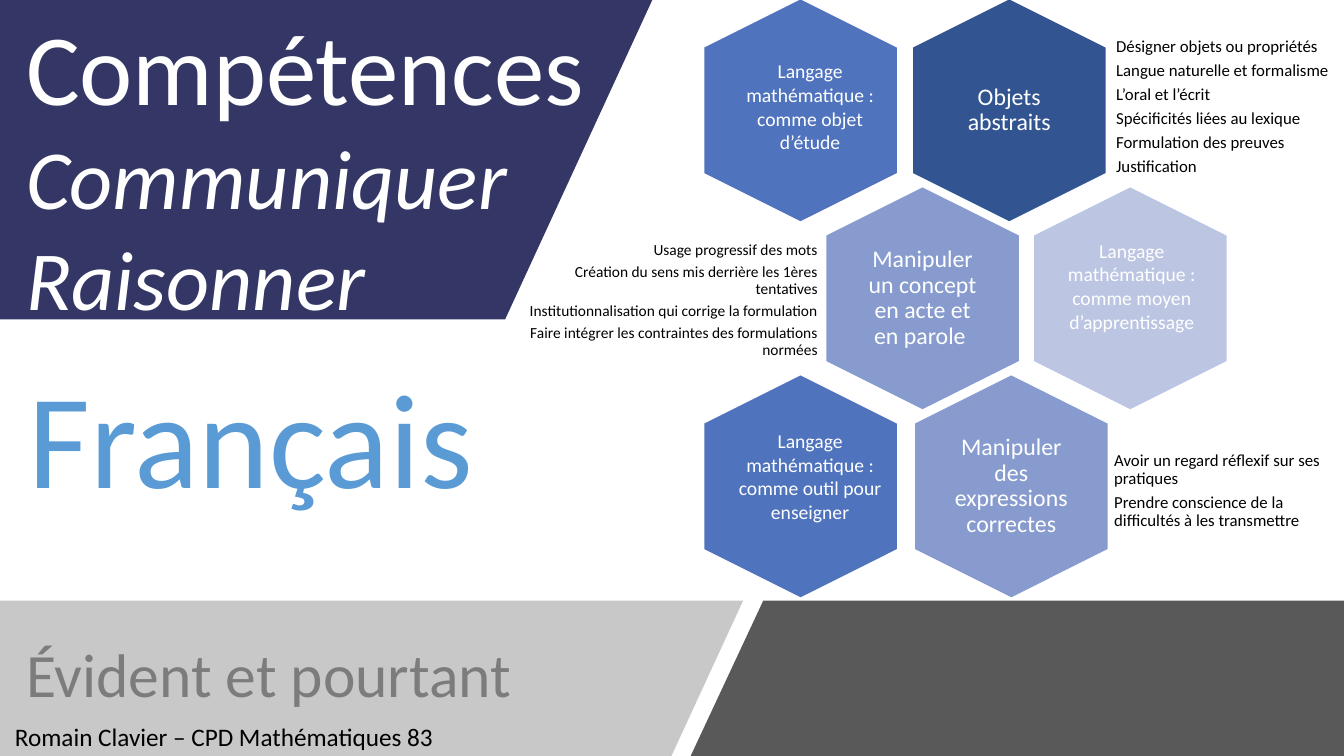
from dataclasses import dataclass
from lxml import etree
from pptx import Presentation
from pptx.dml.color import RGBColor
from pptx.enum.shapes import MSO_SHAPE
from pptx.enum.text import MSO_ANCHOR, PP_ALIGN
from pptx.oxml.ns import qn
from pptx.util import Inches, Pt

HEXAGON = MSO_SHAPE.HEXAGON
TOP, MIDDLE = MSO_ANCHOR.TOP, MSO_ANCHOR.MIDDLE
LEFT, CENTER, RIGHT = PP_ALIGN.LEFT, PP_ALIGN.CENTER, PP_ALIGN.RIGHT

FONT = "Calibri"
BLACK, WHITE = "000000", "FFFFFF"
NAVY, BLUE, PERIWINKLE, PALE = "325491", "4F73BD", "879BCE", "BCC6E2"
HEX_LENGTH, HEX_WIDTH = 2.2, 1.91
LABEL_WIDTH, LABEL_HEIGHT = 1.32, 1.51
ROW_TOPS = [0.14 + 1.865 * row for row in range(3)]

Box = tuple[float, float, float, float]
Point = tuple[float, float]


@dataclass(frozen=True)
class Band:
    corners: list[Point]
    color: str
    opacity: int = 100


@dataclass(frozen=True)
class Cell:
    left: float
    top: float
    color: str
    concept: str = ""


@dataclass(frozen=True)
class Theme:
    box: Box
    text: str


@dataclass(frozen=True)
class Details:
    box: Box
    lines: list[str]
    size: float = 12
    align: PP_ALIGN = LEFT


BANDS = [
    Band([(0, 0), (6.47, 0), (5.01, 3.17), (0, 3.17)], "343765"),
    Band([(0, 5.96), (7.37, 5.96), (6.66, 7.5), (0, 7.5)], "B2B2B2", 70),
    Band([(7.57, 5.96), (13.33, 5.96), (13.33, 7.5), (6.85, 7.5)], "595959"),
]
CELLS = [
    Cell(6.84, ROW_TOPS[0], BLUE),
    Cell(8.91, ROW_TOPS[0], NAVY, "Objets abstraits"),
    Cell(8.05, ROW_TOPS[1], PERIWINKLE, "Manipuler un concept en acte et en parole "),
    Cell(10.11, ROW_TOPS[1], PALE),
    Cell(6.84, ROW_TOPS[2], BLUE),
    Cell(8.93, ROW_TOPS[2], PERIWINKLE, "Manipuler des expressions correctes"),
]
THEMES = [
    Theme((7.21, 0.54, 1.65, 1.04), "Langage mathématique : comme objet d’étude"),
    Theme((10.4, 2.32, 1.65, 1.28), "Langage mathématique : comme moyen d’apprentissage"),
    Theme((7.21, 4.21, 1.65, 1.28), "Langage mathématique : comme outil pour enseigner"),
]
DETAILS = [
    Details((11.02, 0.17, 2.43, 1.78), [
        "Désigner objets ou propriétés",
        "Langue naturelle et formalisme",
        "L’oral et l’écrit",
        "Spécificités liées au lexique",
        "Formulation des preuves",
        "Justification",
    ]),
    Details((5.07, 2.32, 3.09, 1.32), [
        "Usage progressif des mots",
        "Création du sens mis derrière les 1ères tentatives",
        "Institutionnalisation qui corrige la formulation",
        "Faire intégrer les contraintes des formulations normées",
    ], 11, RIGHT),
    Details((11, 4.21, 2.45, 1.32), [
        "Avoir un regard réflexif sur ses pratiques",
        "Prendre conscience de la difficultés à les transmettre",
    ]),
]


def rgb(color: str) -> RGBColor:
    return RGBColor.from_string(color)


def paint(shape, color: str) -> None:
    shape.shadow.inherit = False
    shape.fill.solid()
    shape.fill.fore_color.rgb = rgb(color)
    shape.line.fill.background()


def add_text(slide, box: Box, lines: list[str], *, size: float, color: str = BLACK,
             align: PP_ALIGN = LEFT, anchor: MSO_ANCHOR = TOP, wrap: bool = True,
             inset: float | None = None, spacing: float = 1.0, after: float = 0):
    frame = slide.shapes.add_textbox(*map(Inches, box)).text_frame
    frame.word_wrap = wrap
    frame.vertical_anchor = anchor
    if inset is not None:
        frame.margin_left = frame.margin_right = Inches(inset)
        frame.margin_top = frame.margin_bottom = Inches(inset)
    for index, line in enumerate(lines):
        paragraph = frame.add_paragraph() if index else frame.paragraphs[0]
        paragraph.alignment = align
        paragraph.line_spacing = spacing
        paragraph.space_after = Pt(after)
        run = paragraph.add_run()
        run.text = line
        run.font.name = FONT
        run.font.size = Pt(size)
        run.font.color.rgb = rgb(color)
    return frame


def add_band(slide, band: Band) -> None:
    start, *others = [(Inches(x), Inches(y)) for x, y in band.corners]
    builder = slide.shapes.build_freeform(*start)
    builder.add_line_segments(others, close=True)
    shape = builder.convert_to_shape()
    paint(shape, band.color)
    if band.opacity < 100:
        tint = shape.fill._xPr.find(qn("a:solidFill"))[0]
        etree.SubElement(tint, qn("a:alpha"), val=str(band.opacity * 1000))


def add_cell(slide, cell: Cell) -> None:
    box = (cell.left, cell.top, HEX_LENGTH, HEX_WIDTH)
    hexagon = slide.shapes.add_shape(HEXAGON, *map(Inches, box))
    hexagon.rotation = 90
    paint(hexagon, cell.color)
    if cell.concept:
        label = (cell.left + (HEX_LENGTH - LABEL_WIDTH) / 2,
                 cell.top + (HEX_WIDTH - LABEL_HEIGHT) / 2,
                 LABEL_WIDTH, LABEL_HEIGHT)
        add_text(slide, label, [cell.concept], size=17, color=WHITE, align=CENTER,
                 anchor=MIDDLE, inset=0.07, spacing=0.9, after=17 * 0.35)


def main() -> None:
    deck = Presentation()
    deck.slide_width, deck.slide_height = Inches(13.33), Inches(7.5)
    slide = deck.slides.add_slide(deck.slide_layouts[6])

    add_text(slide, (0.16, 6.18, 7.97, 1.09), ["Évident et pourtant"],
             size=44, anchor=MIDDLE, spacing=0.9)
    for band in BANDS:
        add_band(slide, band)
    for cell in CELLS:
        add_cell(slide, cell)
    for details in DETAILS:
        add_text(slide, details.box, details.lines, size=details.size,
                 align=details.align, anchor=MIDDLE, inset=0.05, spacing=0.9,
                 after=details.size * 0.35)
    for theme in THEMES:
        add_text(slide, theme.box, [theme.text], size=14, color=WHITE, align=CENTER)

    skills = add_text(slide, (0.16, 0, 5.8, 3.33),
                      ["Compétences", "Communiquer", "Raisonner"],
                      size=72, color=WHITE, wrap=False)
    for skill in skills.paragraphs[1:]:
        skill.runs[0].font.size = Pt(60)
        skill.runs[0].font.italic = True
    add_text(slide, (0.16, 3.46, 4.65, 1.72), ["Français"],
             size=96, color="5B9BD5", align=CENTER, wrap=False)
    add_text(slide, (0.05, 7.11, 4.4, 0.4), ["Romain Clavier – CPD Mathématiques 83"],
             size=18, wrap=False)
    deck.save("out.pptx")


if __name__ == "__main__":
    main()
